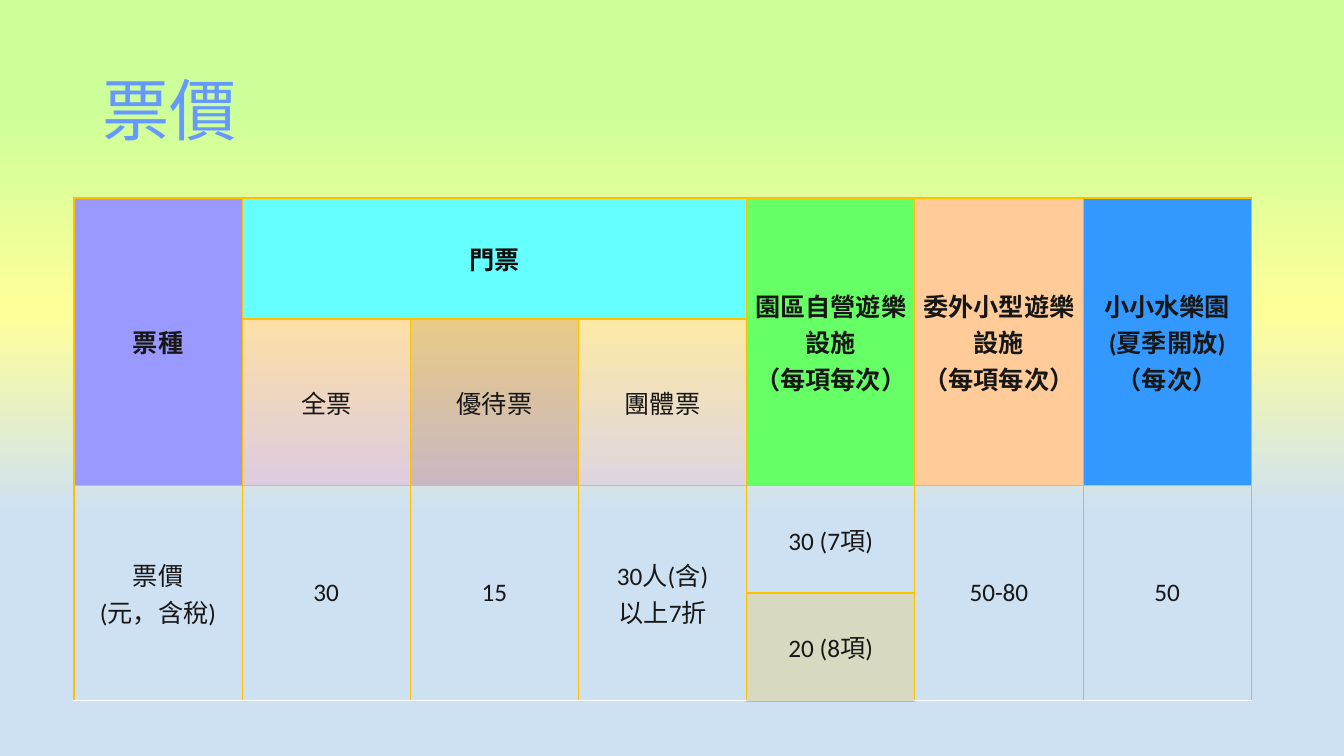
from copy import deepcopy
from dataclasses import dataclass, field

from lxml.etree import SubElement
from pptx import Presentation
from pptx.dml.color import RGBColor
from pptx.enum.text import MSO_ANCHOR as Anchor, PP_ALIGN as Align
from pptx.oxml.ns import qn
from pptx.slide import Slide
from pptx.table import Table, _Cell as Cell
from pptx.text.text import _Paragraph as Paragraph
from pptx.util import Pt


@dataclass(frozen=True)
class Theme:
    background: tuple = ((0.14, "CCFF99"), (0.41, "FFFF99"), (0.68, "CEE1F2"))
    title_color: str = "6699FF"
    ink: str = "181717"
    dark_ink: str = "0D0D0D"
    border: str = "FFC000"
    faint_border: str = "A3B8CC"
    latin: str = "Calibri"
    asian: str = "Noto Sans CJK JP"
    title_size: float = 48
    body_size: float = 18


THEME = Theme()


@dataclass(frozen=True)
class PriceCell:
    row: int
    column: int
    text: str
    fill: str = ""
    rows: int = 1
    columns: int = 1
    opacity: int = 100
    bold: bool = False
    color: str = field(default=THEME.ink)


COLUMN_WIDTH = 120.15
COLUMN_COUNT = 7
ROW_HEIGHTS = (86.4, 118.8, 77.04, 77.04)

PRICE_CELLS = (
    PriceCell(0, 0, "票種", "9999FF", rows=2, bold=True),
    PriceCell(0, 1, "門票", "66FFFF", columns=3, bold=True, color=THEME.dark_ink),
    PriceCell(0, 4, "園區自營遊樂設施\n（每項每次）", "66FF66", rows=2, bold=True),
    PriceCell(0, 5, "委外小型遊樂設施\n（每項每次）", "FFCC99", rows=2, bold=True),
    PriceCell(0, 6, "小小水樂園\n(夏季開放)\n（每次）", "3399FF", rows=2, bold=True),
    PriceCell(1, 1, "全票", "FF66CC", opacity=20),
    PriceCell(1, 2, "優待票", "990033", opacity=20),
    PriceCell(1, 3, "團體票", "FF99CC", opacity=20),
    PriceCell(2, 0, "票價\n(元，含稅)", rows=2),
    PriceCell(2, 1, "30", rows=2),
    PriceCell(2, 2, "15", rows=2),
    PriceCell(2, 3, "30人(含)\n以上7折", rows=2),
    PriceCell(2, 4, "30 (7項)"),
    PriceCell(2, 5, "50-80", rows=2),
    PriceCell(2, 6, "50", rows=2),
    PriceCell(3, 4, "20 (8項)", "FFC000", opacity=20),
)


def paint_background(slide: Slide) -> None:
    fill = slide.background.fill
    fill.gradient()
    fill.gradient_angle = 270
    stop_list = slide.element.find(".//" + qn("a:gsLst"))
    stop_list.append(deepcopy(stop_list[0]))
    for stop, (position, color) in zip(fill.gradient_stops, THEME.background):
        stop.position = position
        stop.color.rgb = RGBColor.from_string(color)


def add_run(paragraph: Paragraph, text: str, size: float, color: str,
            latin: str, bold: bool = False) -> None:
    run = paragraph.add_run()
    run.text = text
    run.font.size = Pt(size)
    run.font.bold = bold
    run.font.name = latin
    run.font.color.rgb = RGBColor.from_string(color)
    properties = run.font._element
    SubElement(properties, qn("a:ea")).set("typeface", THEME.asian)


def add_title(slide: Slide, text: str) -> None:
    box = slide.shapes.add_textbox(Pt(66), Pt(28.8), Pt(828), Pt(104.4))
    frame = box.text_frame
    frame.word_wrap = True
    frame.vertical_anchor = Anchor.MIDDLE
    paragraph = frame.paragraphs[0]
    paragraph.line_spacing = 0.9
    add_run(paragraph, text, THEME.title_size, THEME.title_color, THEME.asian)


def set_borders(cell: Cell, row: int, column: int, entry: PriceCell) -> None:
    last_row = entry.row + entry.rows - 1
    last_column = entry.column + entry.columns - 1
    properties = cell._tc.get_or_add_tcPr()
    edges = (
        ("a:lnL", column == entry.column, column == COLUMN_COUNT - 1),
        ("a:lnR", column == last_column, column >= COLUMN_COUNT - 2),
        ("a:lnT", row == entry.row, False),
        ("a:lnB", row == last_row, row == len(ROW_HEIGHTS) - 1),
    )
    for tag, outer, faint in edges:
        if not outer:
            continue
        line = SubElement(properties, qn(tag))
        line.set("w", str(Pt(0.5 if faint else 1)))
        color = SubElement(SubElement(line, qn("a:solidFill")), qn("a:srgbClr"))
        color.set("val", THEME.faint_border if faint else THEME.border)


def fill_cell(cell: Cell, entry: PriceCell) -> None:
    if not entry.fill:
        cell.fill.background()
        return
    cell.fill.solid()
    cell.fill.fore_color.rgb = RGBColor.from_string(entry.fill)
    if entry.opacity < 100:
        color = cell._tc.tcPr.find(qn("a:solidFill"))[0]
        SubElement(color, qn("a:alpha")).set("val", str(entry.opacity * 1000))


def write_cell(table: Table, entry: PriceCell) -> None:
    cell = table.cell(entry.row, entry.column)
    bottom = entry.row + entry.rows
    right = entry.column + entry.columns
    if entry.rows * entry.columns > 1:
        cell.merge(table.cell(bottom - 1, right - 1))
    for row in range(entry.row, bottom):
        for column in range(entry.column, right):
            part = table.cell(row, column)
            set_borders(part, row, column, entry)
            fill_cell(part, entry)
    cell.vertical_anchor = Anchor.MIDDLE
    cell.margin_left = cell.margin_right = Pt(2.2)
    cell.margin_top = cell.margin_bottom = Pt(2.2)
    paragraph = cell.text_frame.paragraphs[0]
    paragraph.alignment = Align.CENTER
    for index, line in enumerate(entry.text.split("\n")):
        if index:
            paragraph.add_line_break()
        add_run(paragraph, line, THEME.body_size, entry.color, THEME.latin, entry.bold)


def add_price_table(slide: Slide) -> None:
    frame = slide.shapes.add_table(
        len(ROW_HEIGHTS), COLUMN_COUNT, Pt(52.8), Pt(141.4),
        Pt(COLUMN_WIDTH * COLUMN_COUNT), Pt(sum(ROW_HEIGHTS)))
    table = frame.table
    table.first_row = False
    table.horz_banding = False
    for column in table.columns:
        column.width = Pt(COLUMN_WIDTH)
    for row, height in zip(table.rows, ROW_HEIGHTS):
        row.height = Pt(height)
    for entry in PRICE_CELLS:
        write_cell(table, entry)


def main() -> None:
    presentation = Presentation()
    presentation.slide_width = Pt(960)
    presentation.slide_height = Pt(540)
    slide = presentation.slides.add_slide(presentation.slide_layouts[6])
    paint_background(slide)
    add_title(slide, "票價")
    add_price_table(slide)
    presentation.save("out.pptx")


if __name__ == "__main__":
    main()
